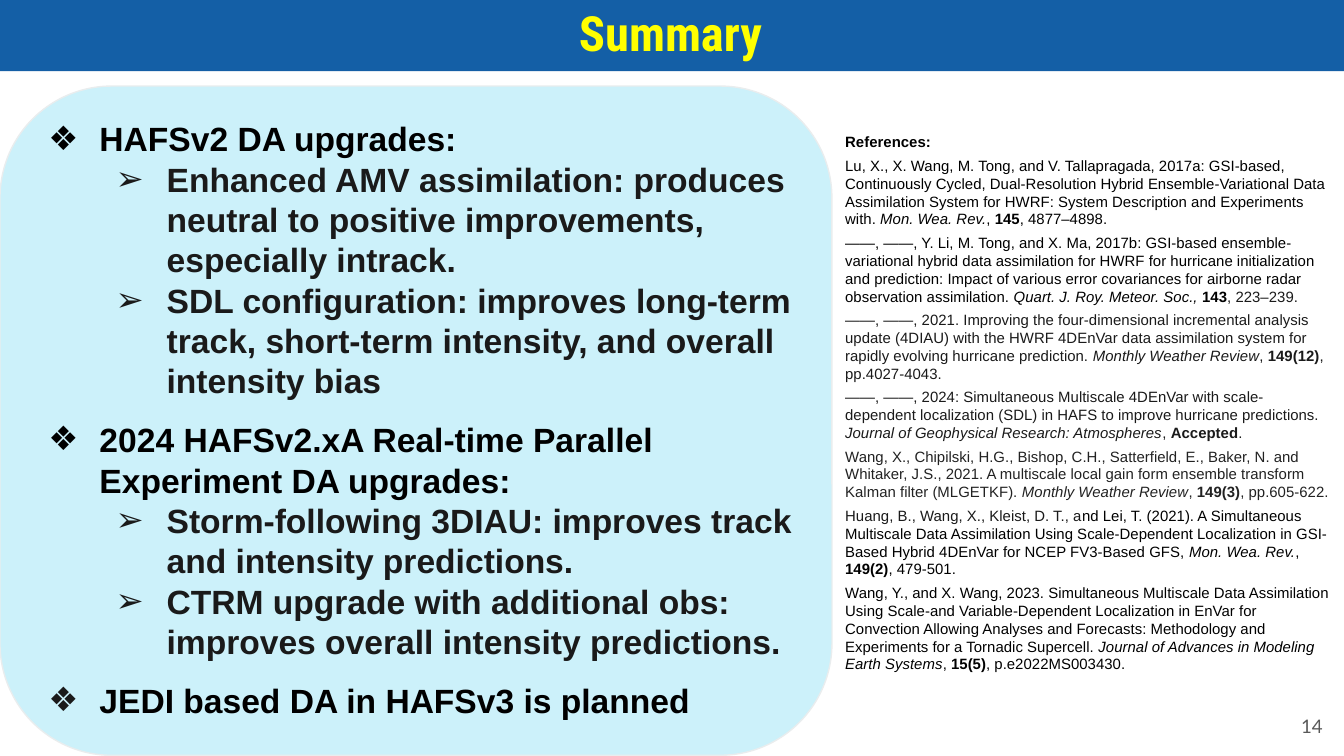
from pptx import Presentation
from pptx.dml.color import RGBColor as RGB
from pptx.enum.shapes import MSO_SHAPE as Shape
from pptx.enum.text import MSO_ANCHOR as Anchor, MSO_AUTO_SIZE as Auto, PP_ALIGN as Align
from pptx.oxml.ns import qn
from pptx.util import Inches, Pt
from lxml.etree import SubElement as Sub

BLUE = RGB(0x14, 0x5F, 0xA6)
PALE = RGB(0xCC, 0xF1, 0xFA)
EDGE = RGB(0xE9, 0xED, 0xEE)
GOLD = RGB(0xFF, 0xFF, 0x00)
BLACK = RGB(0, 0, 0)
DARK = RGB(0x1A, 0x1A, 0x1A)
SOFT = RGB(0x22, 0x22, 0x22)
GREY = RGB(0x59, 0x59, 0x59)

POINTS = [
    (0, "HAFSv2 DA upgrades:", BLACK),
    (1, "Enhanced AMV assimilation: produces neutral to positive improvements, especially intrack.", DARK),
    (1, "SDL configuration: improves long-term track, short-term intensity, and overall intensity bias", DARK),
    (0, "2024 HAFSv2.xA Real-time Parallel Experiment DA upgrades:", BLACK),
    (1, "Storm-following 3DIAU: improves track and intensity predictions.", DARK),
    (1, "CTRM upgrade with additional obs: improves overall intensity predictions.", DARK),
    (0, "JEDI based DA in HAFSv3 is planned", DARK),
]

REFS = [
    (BLACK, "", BLACK,
     "Lu, X., X. Wang, M. Tong, and V. Tallapragada, 2017a: GSI-based, Continuously Cycled, "
     "Dual-Resolution Hybrid Ensemble-Variational Data Assimilation System for HWRF: "
     "System Description and Experiments with. ",
     "Mon. Wea. Rev.", ", ", "145", BLACK, ", 4877–4898."),
    (BLACK, "", BLACK,
     "——, ——, Y. Li, M. Tong, and X. Ma, 2017b: GSI-based ensemble-variational hybrid data "
     "assimilation for HWRF for hurricane initialization and prediction: Impact of various "
     "error covariances for airborne radar observation assimilation. ",
     "Quart. J. Roy. Meteor. Soc., ", "", "143", DARK, ", 223–239."),
    (DARK, "", DARK,
     "——, ——, 2021. Improving the four-dimensional incremental analysis update (4DIAU) with "
     "the HWRF 4DEnVar data assimilation system for rapidly evolving hurricane prediction. ",
     "Monthly Weather Review", ", ", "149(12)", DARK, ", pp.4027-4043."),
    (DARK, "", DARK,
     "——, ——, 2024: Simultaneous Multiscale 4DEnVar with scale-dependent localization (SDL) "
     "in HAFS to improve hurricane predictions. ",
     "Journal of Geophysical Research: Atmospheres", ", ", "Accepted", DARK, "."),
    (SOFT, "", SOFT,
     "Wang, X., Chipilski, H.G., Bishop, C.H., Satterfield, E., Baker, N. and Whitaker, J.S., "
     "2021. A multiscale local gain form ensemble transform Kalman filter (MLGETKF). ",
     "Monthly Weather Review", ", ", "149(3)", SOFT, ", pp.605-622."),
    (DARK, "Huang, B., Wang, X., Kleist, D. T., a", BLACK,
     "nd Lei, T. (2021). A Simultaneous Multiscale Data Assimilation Using Scale-Dependent "
     "Localization in GSI-Based Hybrid 4DEnVar for NCEP FV3-Based GFS, ",
     "Mon. Wea. Rev.", ", ", "149(2)", BLACK, ", 479-501."),
    (BLACK, "", BLACK,
     "Wang, Y., and X. Wang, 2023. Simultaneous Multiscale Data Assimilation Using Scale‐and "
     "Variable‐Dependent Localization in EnVar for Convection Allowing Analyses and "
     "Forecasts: Methodology and Experiments for a Tornadic Supercell. ",
     "Journal of Advances in Modeling Earth Systems", ", ", "15(5)", BLACK, ", p.e2022MS003430."),
]


def write(para, text, size=8, face="Arial", ink=BLACK, bold=False, slant=False):
    run = para.add_run()
    run.text = text
    font = run.font
    font.size, font.name = Pt(size), face
    font.bold, font.italic = bold, slant
    font.color.rgb = ink


def place(box, left, top, width, height):
    box.left, box.top = Inches(left), Inches(top)
    box.width, box.height = Inches(width), Inches(height)


def setup(box, side=0.1, edge=0.1, anchor=Anchor.TOP):
    frame = box.text_frame
    frame.word_wrap = True
    frame.auto_size = Auto.NONE
    frame.vertical_anchor = anchor
    frame.margin_left = frame.margin_right = Inches(side)
    frame.margin_top = frame.margin_bottom = Inches(edge)
    return frame


def add_text(slide, spot, **form):
    return setup(slide.shapes.add_textbox(*map(Inches, spot)), **form)


def add_panel(slide, kind, spot, fill, line=None):
    box = slide.shapes.add_shape(kind, *map(Inches, spot))
    box.shadow.inherit = False
    box.fill.solid()
    box.fill.fore_color.rgb = fill
    if line is None:
        box.line.fill.background()
    else:
        box.line.color.rgb = line
        box.line.width = Pt(0.75)
    return box


def next_para(frame, index):
    return frame.add_paragraph() if index else frame.paragraphs[0]


def add_mark(para, level, ink):
    props = para._p.get_or_add_pPr()
    props.set("marL", str(Inches(0.5 + 0.5 * level)))
    props.set("indent", str(Inches(-0.38)))
    tint = Sub(Sub(props, qn("a:buClr")), qn("a:srgbClr"))
    tint.set("val", str(ink))
    Sub(props, qn("a:buFont")).set("typeface", "Arial")
    Sub(props, qn("a:buChar")).set("char", "❖➢"[level])


def fill_list(frame):
    for index, (level, text, ink) in enumerate(POINTS):
        para = next_para(frame, index)
        para.level = level
        add_mark(para, level, ink)
        para.line_spacing = 1.0
        para.space_before = Pt(10 if index and not level else 0)
        write(para, text, size=18, ink=DARK if level else BLACK, bold=True)


def fill_refs(frame):
    write(frame.paragraphs[0], "References:", bold=True)
    for first, head, ink, body, journal, gap, volume, last, tail in REFS:
        para = frame.add_paragraph()
        para.space_before = Pt(3)
        runs = [
            (head, first, {}), (body, ink, {}), (journal, ink, {"slant": True}),
            (gap, ink, {}), (volume, ink, {"bold": True}), (tail, last, {}),
        ]
        for text, tone, form in runs:
            if text:
                write(para, text, ink=tone, **form)


def main():
    deck = Presentation()
    deck.slide_width = Inches(10)
    deck.slide_height = deck.slide_width * 9 // 16
    slide = deck.slides.add_slide(deck.slide_layouts[1])
    title, body = slide.placeholders

    bar = add_panel(slide, Shape.RECTANGLE, (0, 0, 10, 0.53), BLUE)
    card = add_panel(slide, Shape.ROUNDED_RECTANGLE, (0, 0.64, 6.19, 4.98), PALE, EDGE)
    card.adjustments[0] = 0.167
    tree = slide.shapes._spTree
    for box in (card, bar):
        tree.remove(box._element)
        tree.insert(2, box._element)

    place(title, -0.01, -0.08, 10, 0.64)
    para = setup(title).paragraphs[0]
    para.alignment = Align.CENTER
    write(para, "Summary", size=26, face="Roboto Condensed", ink=GOLD, bold=True)

    place(body, 0.24, 0.88, 5.7, 4.49)
    fill_list(setup(body, side=0, edge=0))

    fill_refs(add_text(slide, (6.19, 0.94, 3.81, 4.3), edge=0.05))

    para = add_text(slide, (9.34, 5.19, 0.6, 0.43), anchor=Anchor.MIDDLE).paragraphs[0]
    para.alignment = Align.RIGHT
    write(para, "14", size=10, face="Lato", ink=GREY)

    deck.save("out.pptx")


if __name__ == "__main__":
    main()
